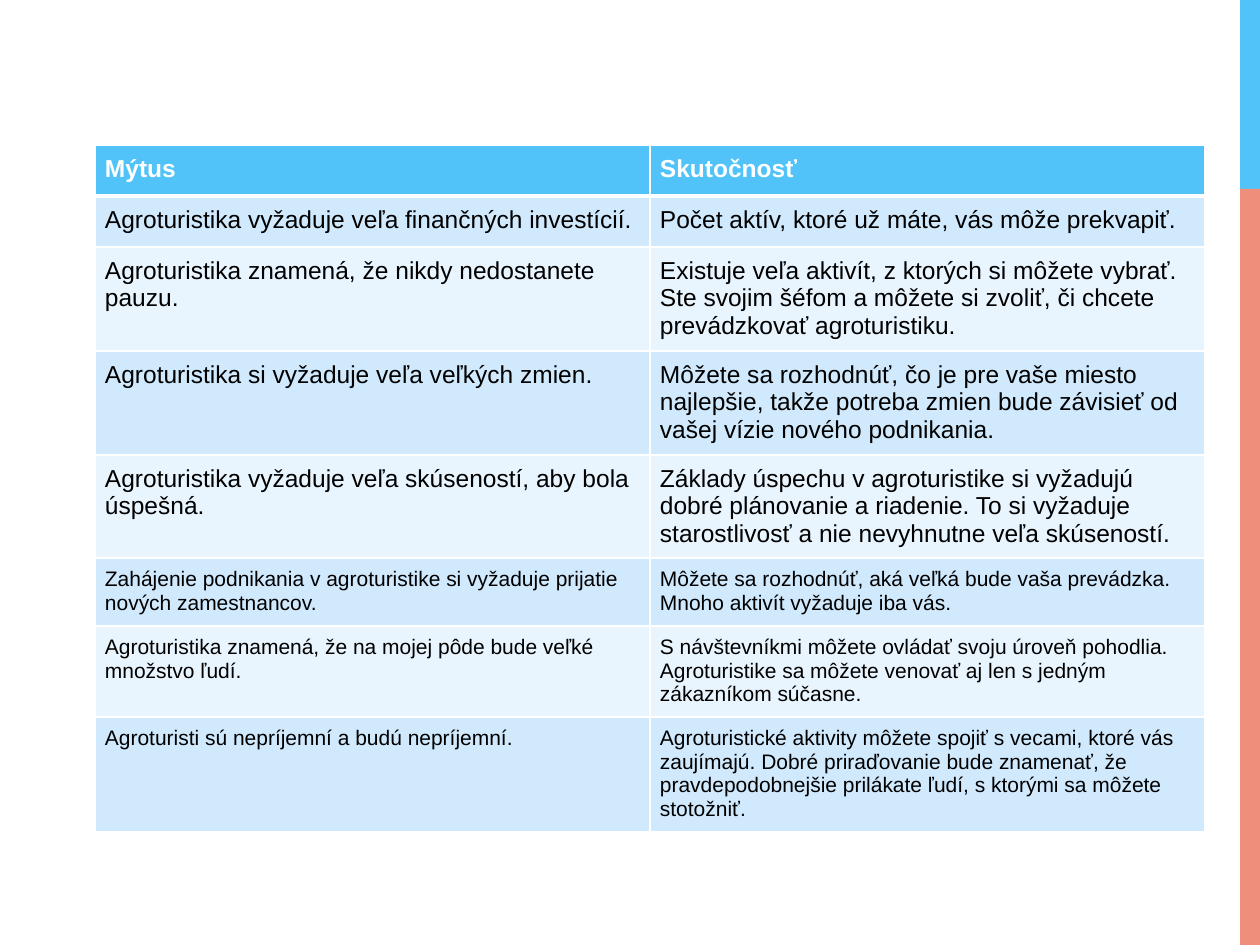
import pptx
import pptx.dml.color
import pptx.enum.shapes
import pptx.oxml
import pptx.oxml.ns
import pptx.util

EMU_PER_PX = 914400 / 126
BLUE, CORAL, WHITE, BLACK = "51C3F9", "EF8E7B", "FFFFFF", "000000"
BANDS = ("D0E9FD", "E9F5FE")
HEADER = {"name": "Arial", "size": pptx.util.Pt(14), "bold": True}
LARGE = {"name": "Arial", "size": pptx.util.Pt(14), "bold": False}
SMALL = {"name": "Arial", "size": pptx.util.Pt(12), "bold": False}

ROWS = [
    (51, HEADER, "Mýtus", "Skutočnosť"),
    (51, LARGE, "Agroturistika vyžaduje veľa finančných investícií.",
     "Počet aktív, ktoré už máte, vás môže prekvapiť."),
    (104, LARGE, "Agroturistika znamená, že nikdy nedostanete pauzu.",
     "Existuje veľa aktivít, z ktorých si môžete vybrať. Ste svojim šéfom "
     "a môžete si zvoliť, či chcete prevádzkovať agroturistiku."),
    (104, LARGE, "Agroturistika si vyžaduje veľa veľkých zmien.",
     "Môžete sa rozhodnúť, čo je pre vaše miesto najlepšie, takže potreba "
     "zmien bude závisieť od vašej vízie nového podnikania."),
    (103, LARGE, "Agroturistika vyžaduje veľa skúseností, aby bola úspešná.",
     "Základy úspechu v agroturistike si vyžadujú dobré plánovanie a riadenie. "
     "To si vyžaduje starostlivosť a nie nevyhnutne veľa skúseností."),
    (68, SMALL, "Zahájenie podnikania v agroturistike si vyžaduje prijatie "
     "nových zamestnancov.",
     "Môžete sa rozhodnúť, aká veľká bude vaša prevádzka. "
     "Mnoho aktivít vyžaduje iba vás."),
    (91, SMALL, "Agroturistika znamená, že na mojej pôde bude veľké množstvo ľudí.",
     "S návštevníkmi môžete ovládať svoju úroveň pohodlia. Agroturistike sa "
     "môžete venovať aj len s jedným zákazníkom súčasne."),
    (115, SMALL, "Agroturisti sú nepríjemní a budú nepríjemní.",
     "Agroturistické aktivity môžete spojiť s vecami, ktoré vás zaujímajú. "
     "Dobré priraďovanie bude znamenať, že pravdepodobnejšie prilákate ľudí, "
     "s ktorými sa môžete stotožniť."),
]


def px(length):
    """Turn whole pixels into EMU."""
    return pptx.util.Emu(round(length * EMU_PER_PX))


def color(code):
    """Turn a hex string into a colour."""
    return pptx.dml.color.RGBColor.from_string(code)


def fill_with(target, code):
    """Give a shape or cell a solid fill."""
    target.fill.solid()
    target.fill.fore_color.rgb = color(code)


def add_bar(page, top, height, code):
    """Draw one block of the right-hand edge strip."""
    bar = page.shapes.add_shape(
        pptx.enum.shapes.MSO_SHAPE.RECTANGLE, px(1240), px(top), px(20), px(height))
    bar.shadow.inherit = False
    fill_with(bar, code)
    bar.line.fill.background()


def set_borders(cell, **widths):
    """Put white borders of the given point widths around a cell."""
    properties = cell._tc.get_or_add_tcPr()
    for position, side in enumerate("LRTB"):
        width = pptx.util.Pt(widths.get(side, 1))
        border = pptx.oxml.parse_xml(
            f'<a:ln{side} {pptx.oxml.ns.nsdecls("a")} w="{width}">'
            f'<a:solidFill><a:srgbClr val="{WHITE}"/></a:solidFill></a:ln{side}>')
        properties.insert(position, border)


def fill_cell(cell, text, style, text_code, fill_code):
    """Write a cell's text and set its margins, font and fill."""
    for side in ("left", "right", "top", "bottom"):
        setattr(cell, f"margin_{side}", px(10))
    span = cell.text_frame.paragraphs[0].add_run()
    span.text = text
    for name, value in style.items():
        setattr(span.font, name, value)
    span.font.color.rgb = color(text_code)
    fill_with(cell, fill_code)


def add_myth_table(page):
    """Draw the table of myths and facts."""
    height = sum(row[0] for row in ROWS)
    table = page.shapes.add_table(
        len(ROWS), 2, px(95), px(145), px(1110), px(height)).table
    for column in table.columns:
        column.width = px(555)
    for index, (row_height, style, *texts) in enumerate(ROWS):
        table.rows[index].height = px(row_height)
        is_header = index == 0
        text_code = WHITE if is_header else BLACK
        fill_code = BLUE if is_header else BANDS[(index - 1) % 2]
        widths = {0: {"B": 3}, 1: {"T": 3}}.get(index, {})
        for cell, text in zip(table.rows[index].cells, texts):
            fill_cell(cell, text, style, text_code, fill_code)
            set_borders(cell, **widths)


def main():
    """Build and save the slide."""
    deck = pptx.Presentation()
    deck.slide_width, deck.slide_height = px(1260), px(945)
    page = deck.slides.add_slide(deck.slide_layouts[6])
    add_bar(page, 0, 189, BLUE)
    add_bar(page, 189, 756, CORAL)
    add_myth_table(page)
    deck.save("out.pptx")


if __name__ == "__main__":
    main()
